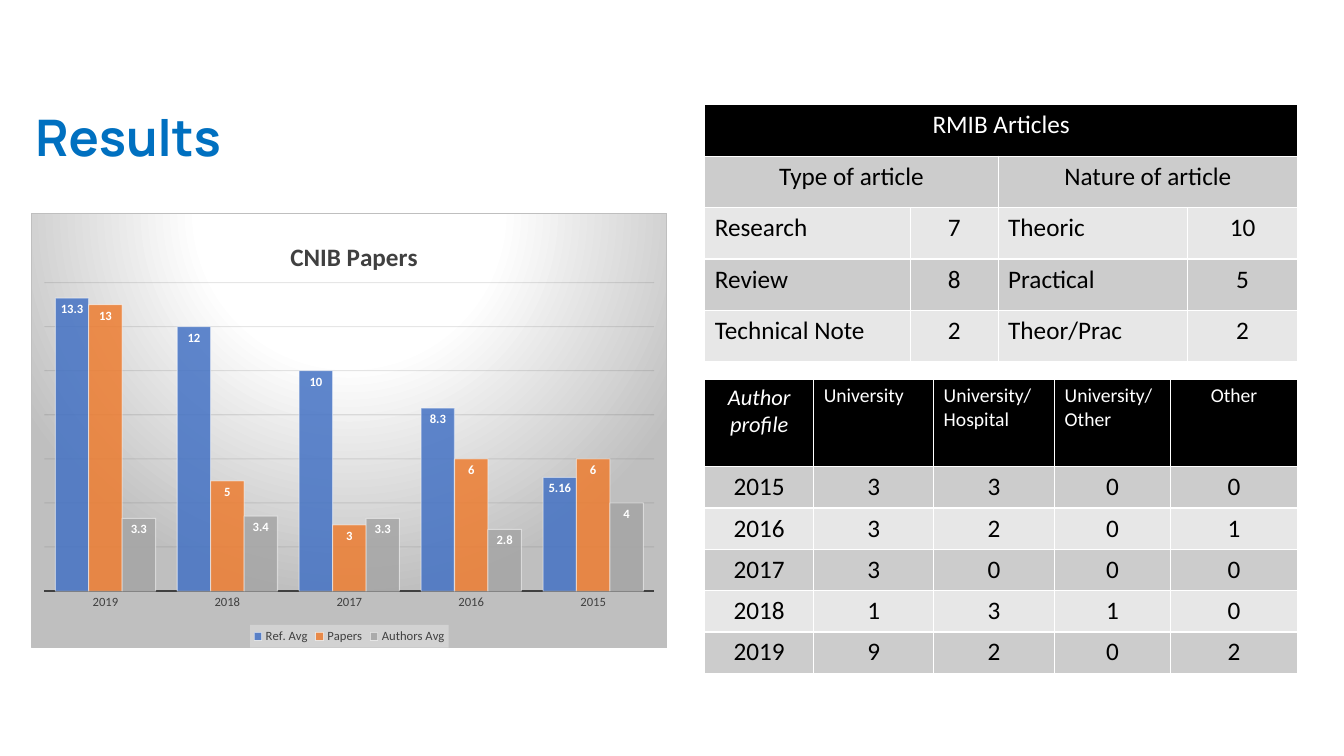
from dataclasses import dataclass

from lxml import etree
from pptx import Presentation
from pptx.chart.data import CategoryChartData
from pptx.dml.color import RGBColor
from pptx.enum.chart import (XL_CHART_TYPE, XL_LABEL_POSITION,
                             XL_LEGEND_POSITION, XL_TICK_MARK)
from pptx.enum.text import MSO_ANCHOR, MSO_AUTO_SIZE, PP_ALIGN
from pptx.oxml import parse_xml
from pptx.oxml.ns import nsdecls, qn
from pptx.util import Inches, Pt

COLUMNS = XL_CHART_TYPE.COLUMN_CLUSTERED
INSIDE_END = XL_LABEL_POSITION.INSIDE_END
BOTTOM = XL_LEGEND_POSITION.BOTTOM
NO_TICK = XL_TICK_MARK.NONE
TOP = MSO_ANCHOR.TOP
NO_FIT = MSO_AUTO_SIZE.NONE
LEFT, CENTER = PP_ALIGN.LEFT, PP_ALIGN.CENTER


@dataclass(frozen=True)
class Theme:
    head_font: str = "Manrope"
    font: str = "Calibri"
    title: str = "0070C0"
    white: str = "FFFFFF"
    black: str = "000000"
    bands: tuple = ("CCCCCC", "E7E7E7")
    series: tuple = ("4472C4", "ED7D31", "A5A5A5")
    text: str = "404040"
    edge: str = "BFBFBF"
    grid: str = "0D0D0D"
    legend: str = "F2F2F2"
    title_pt: int = 36
    body_pt: int = 18
    lead_pt: int = 16
    head_pt: int = 14
    label_pt: int = 9


THEME = Theme()

ARTICLES = [
    ["RMIB Articles", "", "", ""],
    ["Type of article", "", "Nature of article", ""],
    ["Research", "7", "Theoric", "10"],
    ["Review", "8", "Practical", "5"],
    ["Technical Note", "2", "Theor/Prac", "2"],
]
AUTHORS = [
    ["Author profile", "University", "University/Hospital",
     "University/Other", "Other"],
    ["2015", "3", "3", "0", "0"],
    ["2016", "3", "2", "0", "1"],
    ["2017", "3", "0", "0", "0"],
    ["2018", "1", "3", "1", "0"],
    ["2019", "9", "2", "0", "2"],
]
YEARS = ["2019", "2018", "2017", "2016", "2015"]
PAPERS = {
    "Ref. Avg": (13.3, 12, 10, 8.3, 5.16),
    "Papers": (13, 5, 3, 6, 6),
    "Authors Avg": (3.3, 3.4, 3.3, 2.8, 4),
}


def style(font, size, color, bold=False, italic=False, name=THEME.font):
    font.name, font.size = name, Pt(size)
    font.bold, font.italic = bold, italic
    font.color.rgb = RGBColor.from_string(color)


def paint(fill, color, alpha=100):
    """Fill with one colour, alpha being the opacity in percent."""
    fill.solid()
    fill.fore_color.rgb = RGBColor.from_string(color)
    if alpha < 100:
        tint = next(fill._xPr.iter(qn("a:srgbClr")))
        etree.SubElement(tint, qn("a:alpha"), val=str(alpha * 1000))


def draw_line(line, color, width, alpha=100):
    line.width = Pt(width)
    paint(line.fill, color, alpha)


def add_title(slide, box, text):
    title = slide.shapes.title
    title.left, title.top, title.width, title.height = map(Inches, box)
    frame = title.text_frame
    frame.text = text
    frame.auto_size, frame.vertical_anchor = NO_FIT, TOP
    line = frame.paragraphs[0]
    line.alignment, line.line_spacing = LEFT, 0.9
    style(line.font, THEME.title_pt, THEME.title, True, name=THEME.head_font)


def layout(x, y, w=None, h=None):
    """Manual chart layout in fractions of the chart; sized if w is given."""
    parts = '<c:layoutTarget val="inner"/>' if w else ""
    parts += '<c:xMode val="edge"/><c:yMode val="edge"/>'
    parts += f'<c:x val="{x}"/><c:y val="{y}"/>'
    if w:
        parts += f'<c:w val="{w}"/><c:h val="{h}"/>'
    return parse_xml(f'<c:layout {nsdecls("c")}><c:manualLayout>{parts}'
                     '</c:manualLayout></c:layout>')


def place(parent, node, after=None):
    for old in parent.findall(qn("c:layout")):
        parent.remove(old)
    if after is None:
        parent.insert(0, node)
    else:
        after.addnext(node)


def back_fill(chart):
    """Give the chart area its round gradient and border."""
    stops = ((0, THEME.white), (39, THEME.white), (100, THEME.edge))
    stops = "".join(f'<a:gs pos="{at * 1000}"><a:srgbClr val="{color}"/></a:gs>'
                    for at, color in stops)
    area = parse_xml(
        f'<c:spPr {nsdecls("c", "a")}><a:gradFill><a:gsLst>{stops}</a:gsLst>'
        '<a:path path="circle"><a:fillToRect l="50000" t="-80000" r="50000"'
        ' b="180000"/></a:path></a:gradFill><a:ln w="9525"><a:solidFill>'
        f'<a:srgbClr val="{THEME.edge}"/></a:solidFill></a:ln></c:spPr>')
    chart._chartSpace.find(qn("c:chart")).addnext(area)


def add_papers(slide, box):
    data = CategoryChartData()
    data.categories = YEARS
    for name, values in PAPERS.items():
        data.add_series(name, values)
    chart = slide.shapes.add_chart(COLUMNS, *map(Inches, box), data).chart
    style(chart.font, THEME.label_pt, THEME.text)
    back_fill(chart)

    title = chart.chart_title
    title.text_frame.text = "CNIB Papers"
    style(title.text_frame.paragraphs[0].font, THEME.body_pt, THEME.text, True)
    place(title._element, layout(0.4, 0.05), title._element.find(qn("c:tx")))
    plot_area = chart._chartSpace.find(".//" + qn("c:plotArea"))
    place(plot_area, layout(0.02, 0.16, 0.96, 0.71))

    chart.has_legend = True
    legend = chart.legend
    legend.position, legend.include_in_layout = BOTTOM, False
    style(legend.font, THEME.label_pt, THEME.text)
    shade = parse_xml(
        f'<c:spPr {nsdecls("c", "a")}><a:solidFill><a:srgbClr '
        f'val="{THEME.legend}"><a:alpha val="39000"/></a:srgbClr>'
        '</a:solidFill></c:spPr>')
    legend._element.find(qn("c:txPr")).addprevious(shade)

    years, scale = chart.category_axis, chart.value_axis
    years.major_tick_mark = NO_TICK
    style(years.tick_labels.font, THEME.label_pt, THEME.text)
    draw_line(years.format.line, THEME.text, 1.5)
    scale.minimum_scale, scale.maximum_scale, scale.major_unit = 0, 14, 2
    scale.visible = False
    draw_line(scale.major_gridlines.format.line, THEME.grid, 0.75, 10)

    plot = chart.plots[0]
    plot.gap_width, plot.overlap, plot.vary_by_categories = 65, 0, False
    for series, color in zip(plot.series, THEME.series):
        paint(series.format.fill, color, 85)
        draw_line(series.format.line, THEME.white, 0.75, 50)
        labels = series.data_labels
        labels.show_value, labels.position = True, INSIDE_END
        style(labels.font, THEME.label_pt, THEME.white, True)


def add_grid(slide, box, widths, heights, rows):
    """Add a table with a black head row and grey bands; return it."""
    table = slide.shapes.add_table(len(rows), len(widths),
                                   *map(Inches, box)).table
    for col, width in zip(table.columns, widths):
        col.width = Inches(width)
    for r, (row, height) in enumerate(zip(rows, heights)):
        table.rows[r].height = Inches(height)
        for c, text in enumerate(row):
            cell = table.cell(r, c)
            cell.text = text
            paint(cell.fill, THEME.bands[(r - 1) % 2] if r else THEME.black)
            line = cell.text_frame.paragraphs[0]
            line.alignment = CENTER
            style(line.font, THEME.body_pt, THEME.black if r else THEME.white)
    return table


def add_articles(slide, box):
    table = add_grid(slide, box, (2.04, 0.87, 1.88, 1.09),
                     [0.51] * len(ARTICLES), ARTICLES)
    for r, first, last in ((0, 0, 3), (1, 0, 1), (1, 2, 3)):
        table.cell(r, first).merge(table.cell(r, last))
    for r in range(2, len(ARTICLES)):
        for c in (0, 2):
            table.cell(r, c).text_frame.paragraphs[0].alignment = LEFT


def add_authors(slide, box):
    table = add_grid(slide, box, (1.08, 1.19, 1.2, 1.15, 1.26),
                     [0.87] + [0.41] * 5, AUTHORS)
    for c in range(len(AUTHORS[0])):
        line = table.cell(0, c).text_frame.paragraphs[0]
        line.alignment = LEFT if c in (1, 2, 3) else CENTER
        size = THEME.head_pt if c else THEME.lead_pt
        style(line.font, size, THEME.white, italic=c == 0)


def main():
    deck = Presentation()
    deck.slide_width, deck.slide_height = Inches(13.33), Inches(7.5)
    slide = deck.slides.add_slide(deck.slide_layouts[5])
    add_title(slide, (0.25, 1.07, 11.06, 1), "Results")
    add_papers(slide, (0.31, 2.11, 6.31, 4.32))
    add_articles(slide, (6.99, 1.04, 5.88, 2.55))
    add_authors(slide, (6.99, 3.76, 5.88, 2.92))
    deck.save("out.pptx")


if __name__ == "__main__":
    main()
